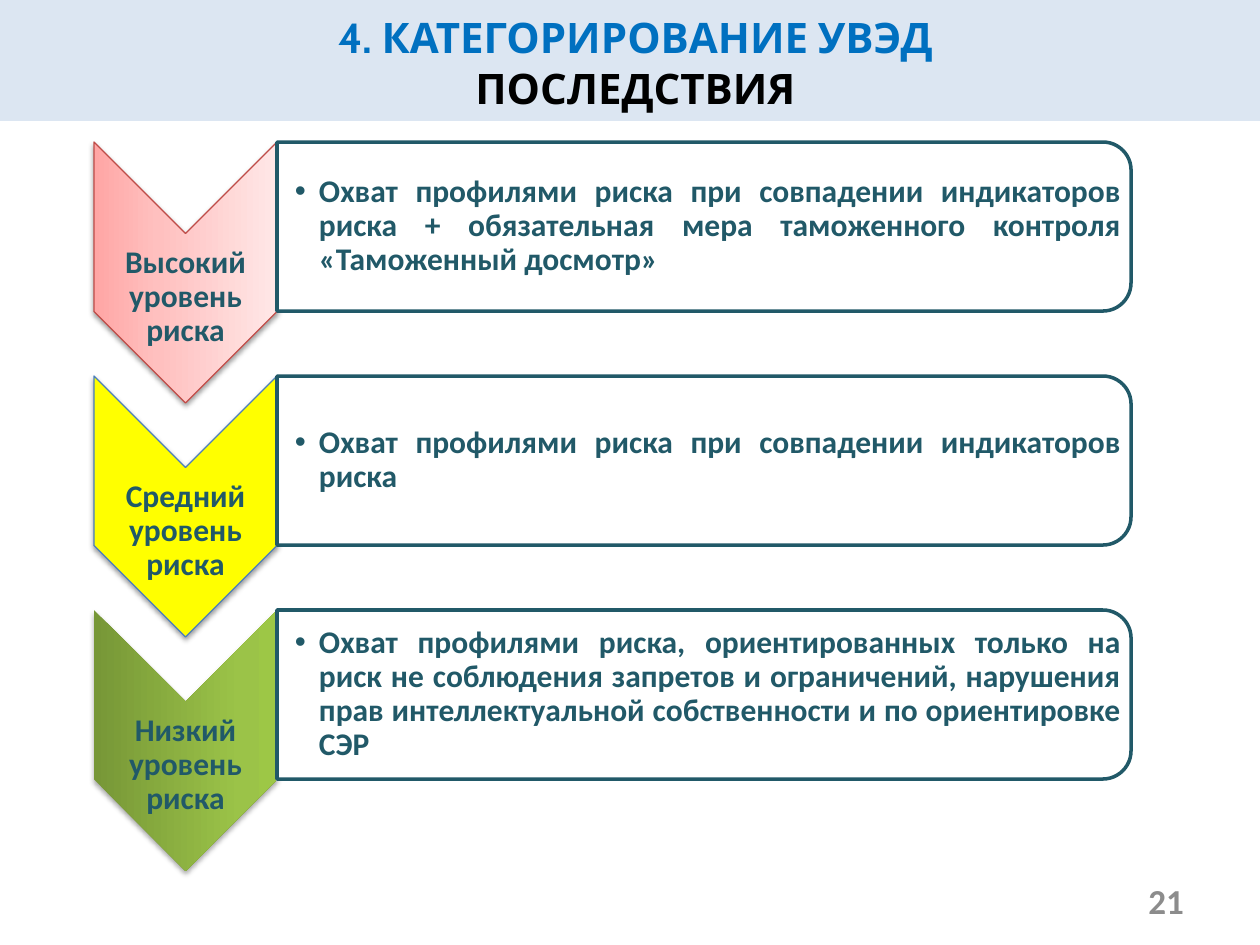
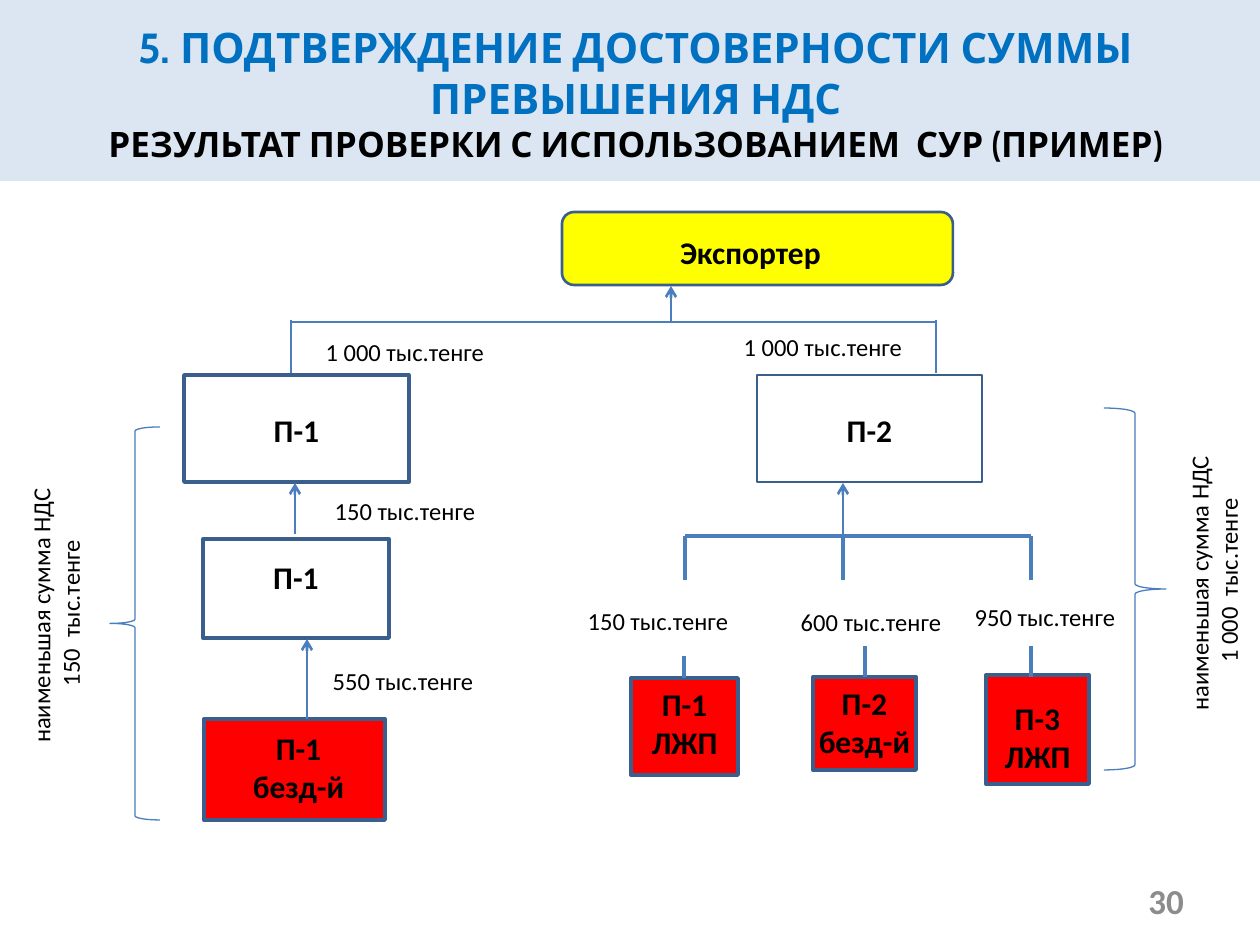
from dataclasses import dataclass
from typing import Optional

from pptx import Presentation
from pptx.dml.color import RGBColor
from pptx.enum.shapes import MSO_CONNECTOR, MSO_SHAPE
from pptx.enum.text import MSO_ANCHOR, PP_ALIGN
from pptx.oxml.ns import qn
from pptx.oxml.xmlchemy import OxmlElement
from pptx.util import Emu, Pt

EMU_PER_INCH = 914400
PX_PER_INCH = 126
PAGE_WIDTH, PAGE_HEIGHT = 1260, 945

RECT = MSO_SHAPE.RECTANGLE
ROUNDED = MSO_SHAPE.ROUNDED_RECTANGLE
CHEVRON = MSO_SHAPE.CHEVRON
PANEL = MSO_SHAPE.ROUND_2_SAME_RECTANGLE
LEFT_BRACE, RIGHT_BRACE = MSO_SHAPE.LEFT_BRACE, MSO_SHAPE.RIGHT_BRACE
STRAIGHT = MSO_CONNECTOR.STRAIGHT
TOP, MIDDLE = MSO_ANCHOR.TOP, MSO_ANCHOR.MIDDLE
CENTER, RIGHT, JUSTIFY = PP_ALIGN.CENTER, PP_ALIGN.RIGHT, PP_ALIGN.JUSTIFY

TITLE_FONT, BODY_FONT = "Cabin", "Calibri"
BLACK, WHITE, RED, YELLOW = "000000", "FFFFFF", "FF0000", "FFFF00"
BAND_FILL, TITLE_BLUE, NUMBER_GRAY = "DCE6F2", "0070C0", "8C8C8C"
TEAL, LINK_BLUE, NODE_LINE = "215968", "4B7EBC", "3A5F8C"
DEFAULT_INSETS = (13, 6, 13, 6)


@dataclass(frozen=True)
class Box:
    left: int
    top: int
    width: int
    height: int


@dataclass(frozen=True)
class Para:
    text: str
    size: int = 18
    color: str = BLACK
    bold: bool = True
    font: str = BODY_FONT
    align: PP_ALIGN = CENTER
    spacing: Optional[float] = None
    hanging: int = 0


@dataclass(frozen=True)
class RiskLevel:
    name: str
    consequence: str
    stops: tuple[tuple[int, str], ...]
    line: Optional[str]
    shadow_alpha: int


@dataclass(frozen=True)
class Node:
    """A company box; drop and shift place its label from the top and the middle."""
    box: Box
    label: tuple[str, ...]
    drop: int
    fill: Optional[str] = None
    line_width: float = 2.25
    shift: int = 0
    kind: MSO_SHAPE = RECT


@dataclass(frozen=True)
class Link:
    x1: int
    y1: int
    x2: int
    y2: int
    width: float = 1.5
    arrow: bool = False


RISK_LEVELS = (
    RiskLevel("Высокий уровень риска",
              "Охват профилями риска при совпадении индикаторов риска + "
              "обязательная мера таможенного контроля «Таможенный досмотр»",
              ((0, "FFA6A5"), (35, "FFC0BF"), (100, "FFE7E7")), "BF4C48", 38),
    RiskLevel("Средний уровень риска",
              "Охват профилями риска при совпадении индикаторов риска",
              ((0, YELLOW),), LINK_BLUE, 38),
    RiskLevel("Низкий уровень риска",
              "Охват профилями риска, ориентированных только на риск не "
              "соблюдения запретов и ограничений, нарушения прав "
              "интеллектуальной собственности и по ориентировке СЭР",
              ((0, "779737"), (80, "9BC348"), (100, "9DC746")), None, 35),
)

NODES = (
    Node(Box(562, 212, 391, 73), ("Экспортер",), 17, YELLOW, 1.5, -7, ROUNDED),
    Node(Box(184, 375, 225, 107), ("П-1",), 36, line_width=2),
    Node(Box(757, 375, 225, 107), ("П-2",), 36, line_width=1.5),
    Node(Box(203, 539, 186, 99), ("П-1",), 19),
    Node(Box(204, 719, 181, 101), ("П-1", "безд-й"), 10, RED, shift=4),
    Node(Box(631, 678, 107, 97), ("П-1", "ЛЖП"), 7, RED),
    Node(Box(813, 677, 103, 93), ("П-2", "безд-й"), 7, RED),
    Node(Box(986, 675, 103, 109), ("П-3", "ЛЖП"), 24, RED),
)

LINKS = (
    Link(291, 322, 936, 322),
    *(Link(x, 320, x, 373) for x in (291, 936)),
    Link(671, 322, 671, 286, arrow=True),
    Link(295, 534, 295, 483, arrow=True),
    Link(307, 719, 307, 639, arrow=True),
    Link(843, 540, 843, 483, arrow=True),
    Link(685, 536, 1031, 536, 2.25),
    *(Link(x, 536, x, 580, 2.25) for x in (685, 843, 1031)),
    Link(684, 656, 684, 678, 2.25),
    *(Link(x, 646, x, 677, 2.25) for x in (865, 1031)),
)

# Middle of the label, its top, and the sum
AMOUNTS = (
    (405, 331, "1 000 тыс.тенге"),
    (823, 326, "1 000 тыс.тенге"),
    (405, 490, "150 тыс.тенге"),
    (403, 660, "550 тыс.тенге"),
    (658, 600, "150 тыс.тенге"),
    (871, 601, "600 тыс.тенге"),
    (1045, 596, "950 тыс.тенге"),
)

BRACES = (
    (LEFT_BRACE, Box(110, 427, 50, 393),
     Box(20, 456, 72, 314), "наименьшая сумма НДС  150  тыс.тенге"),
    (RIGHT_BRACE, Box(1104, 408, 62, 362),
     Box(1178, 431, 72, 299), "наименьшая сумма НДС  1 000  тыс.тенге"),
)


def px(value: float) -> Emu:
    return Emu(round(value * EMU_PER_INCH / PX_PER_INCH))


def rgb(color: str) -> RGBColor:
    return RGBColor.from_string(color)


def add_xml(parent, tag: str, **attributes):
    child = OxmlElement(tag)
    for name, value in attributes.items():
        child.set(name, str(value))
    parent.append(child)
    return child


def frame(box: Box, rotation: int) -> tuple[Emu, ...]:
    """Return the unrotated frame that fills the box once it is turned."""
    width, height = box.width, box.height
    if rotation in (90, 270):
        width, height = height, width
    left = box.left + (box.width - width) / 2
    top = box.top + (box.height - height) / 2
    return px(left), px(top), px(width), px(height)


def write(shape, paras: list[Para], anchor=TOP, insets=DEFAULT_INSETS) -> None:
    text = shape.text_frame
    text.word_wrap = True
    text.vertical_anchor = anchor
    (text.margin_left, text.margin_top,
     text.margin_right, text.margin_bottom) = map(px, insets)
    for index, para in enumerate(paras):
        paragraph = text.add_paragraph() if index else text.paragraphs[0]
        paragraph.text = para.text
        paragraph.alignment = para.align
        if para.spacing:
            paragraph.line_spacing = para.spacing
        if para.hanging:
            properties = paragraph._p.get_or_add_pPr()
            properties.set("marL", str(px(para.hanging)))
            properties.set("indent", str(-px(para.hanging)))
            add_xml(properties, "a:buFont", typeface="Arial")
            add_xml(properties, "a:buChar", char="•")
        font = paragraph.font
        font.name, font.size, font.bold = para.font, Pt(para.size), para.bold
        font.color.rgb = rgb(para.color)


def add_text(page, box: Box, paras: list[Para], anchor=TOP,
             insets=DEFAULT_INSETS, rotation: int = 0) -> None:
    shape = page.shapes.add_textbox(*frame(box, rotation))
    shape.rotation = rotation
    write(shape, paras, anchor, insets)


def add_shape(page, kind: MSO_SHAPE, box: Box, fill: Optional[str] = None,
              line: Optional[str] = None, line_width: float = 0.75,
              rotation: int = 0):
    shape = page.shapes.add_shape(kind, *frame(box, rotation))
    shape.rotation = rotation
    shape.shadow.inherit = False
    if fill:
        shape.fill.solid()
        shape.fill.fore_color.rgb = rgb(fill)
    else:
        shape.fill.background()
    if line:
        shape.line.color.rgb = rgb(line)
        shape.line.width = Pt(line_width)
    else:
        shape.line.fill.background()
    return shape


def set_gradient(shape, stops: tuple[tuple[int, str], ...]) -> None:
    shape.fill.gradient()
    shape.fill.gradient_angle = 90
    stop_list = shape._element.spPr.find(qn("a:gradFill")).find(qn("a:gsLst"))
    for stop in list(stop_list):
        stop_list.remove(stop)
    for position, color in stops:
        stop = add_xml(stop_list, "a:gs", pos=position * 1000)
        add_xml(stop, "a:srgbClr", val=color)


def set_shadow(shape, alpha: int) -> None:
    effects = shape._element.spPr.find(qn("a:effectLst"))
    shadow = add_xml(effects, "a:outerShdw", blurRad=Pt(3.1), dist=Pt(1.6),
                     dir=5400000, rotWithShape=0)
    color = add_xml(shadow, "a:srgbClr", val=BLACK)
    add_xml(color, "a:alpha", val=alpha * 1000)


def add_link(page, link: Link) -> None:
    ends = map(px, (link.x1, link.y1, link.x2, link.y2))
    connector = page.shapes.add_connector(STRAIGHT, *ends)
    connector.line.color.rgb = rgb(LINK_BLUE)
    connector.line.width = Pt(link.width)
    if link.arrow:
        add_xml(connector.line._get_or_add_ln(), "a:tailEnd", type="arrow")
    add_xml(connector._element.spPr, "a:effectLst")


def add_page(deck, band_height: int, title_top: int, title: str,
             subtitle: str, subtitle_size: int, number: int):
    """Add a blank page with the title band and the page number."""
    page = deck.slides.add_slide(deck.slide_layouts[6])
    add_shape(page, RECT, Box(0, 0, PAGE_WIDTH, band_height), BAND_FILL)
    add_text(page, Box(25, title_top, 1221, band_height - title_top), [
        Para(title, 24, TITLE_BLUE, font=TITLE_FONT),
        Para(subtitle, subtitle_size, font=TITLE_FONT)])
    add_text(page, Box(903, 876, 294, 50),
             [Para(str(number), 20, NUMBER_GRAY, align=RIGHT)], MIDDLE)
    return page


def add_risk_level(page, level: RiskLevel, top: int) -> None:
    chevron = add_shape(page, CHEVRON, Box(94, top, 183, 261),
                        level.stops[0][1], level.line, rotation=90)
    if len(level.stops) > 1:
        set_gradient(chevron, level.stops)
    set_shadow(chevron, level.shadow_alpha)
    add_text(page, Box(94, top + 104, 183, 102),
             [Para(level.name, color=TEAL, spacing=0.9)], MIDDLE, (1, 1, 1, 1))
    add_shape(page, PANEL, Box(277, top, 854, 169), WHITE, TEAL, 2, 90)
    add_text(page, Box(277, top + 8, 845, 153),
             [Para(level.consequence, color=TEAL, align=JUSTIFY,
                   spacing=0.9, hanging=24)], MIDDLE, (18, 1, 1, 1))


def add_node(page, node: Node) -> None:
    shape = add_shape(page, node.kind, node.box, node.fill, NODE_LINE,
                      node.line_width)
    insets = (max(2 * node.shift, 0), node.drop, max(-2 * node.shift, 0), 0)
    write(shape, [Para(text) for text in node.label], insets=insets)


def build_consequences(deck) -> None:
    page = add_page(deck, 121, 6, "4. КАТЕГОРИРОВАНИЕ УВЭД",
                    "ПОСЛЕДСТВИЯ", 24, 21)
    for index, level in enumerate(RISK_LEVELS):
        add_risk_level(page, level, 142 + 234 * index)


def build_vat_check(deck) -> None:
    page = add_page(deck, 181, 16,
                    "5. ПОДТВЕРЖДЕНИЕ ДОСТОВЕРНОСТИ СУММЫ ПРЕВЫШЕНИЯ НДС",
                    "РЕЗУЛЬТАТ ПРОВЕРКИ С ИСПОЛЬЗОВАНИЕМ  СУР (ПРИМЕР)", 20, 30)
    for node in NODES:
        add_node(page, node)
    for link in LINKS:
        add_link(page, link)
    for middle, top, amount in AMOUNTS:
        add_text(page, Box(middle - 108, top, 216, 43),
                 [Para(amount, 14, bold=False)])
    for kind, brace_box, note_box, note in BRACES:
        add_shape(page, kind, brace_box, line=LINK_BLUE)
        add_text(page, note_box, [Para(note, 14, bold=False)], rotation=270)


def main() -> None:
    deck = Presentation()
    deck.slide_width, deck.slide_height = px(PAGE_WIDTH), px(PAGE_HEIGHT)
    build_consequences(deck)
    build_vat_check(deck)
    deck.save("out.pptx")


if __name__ == "__main__":
    main()
